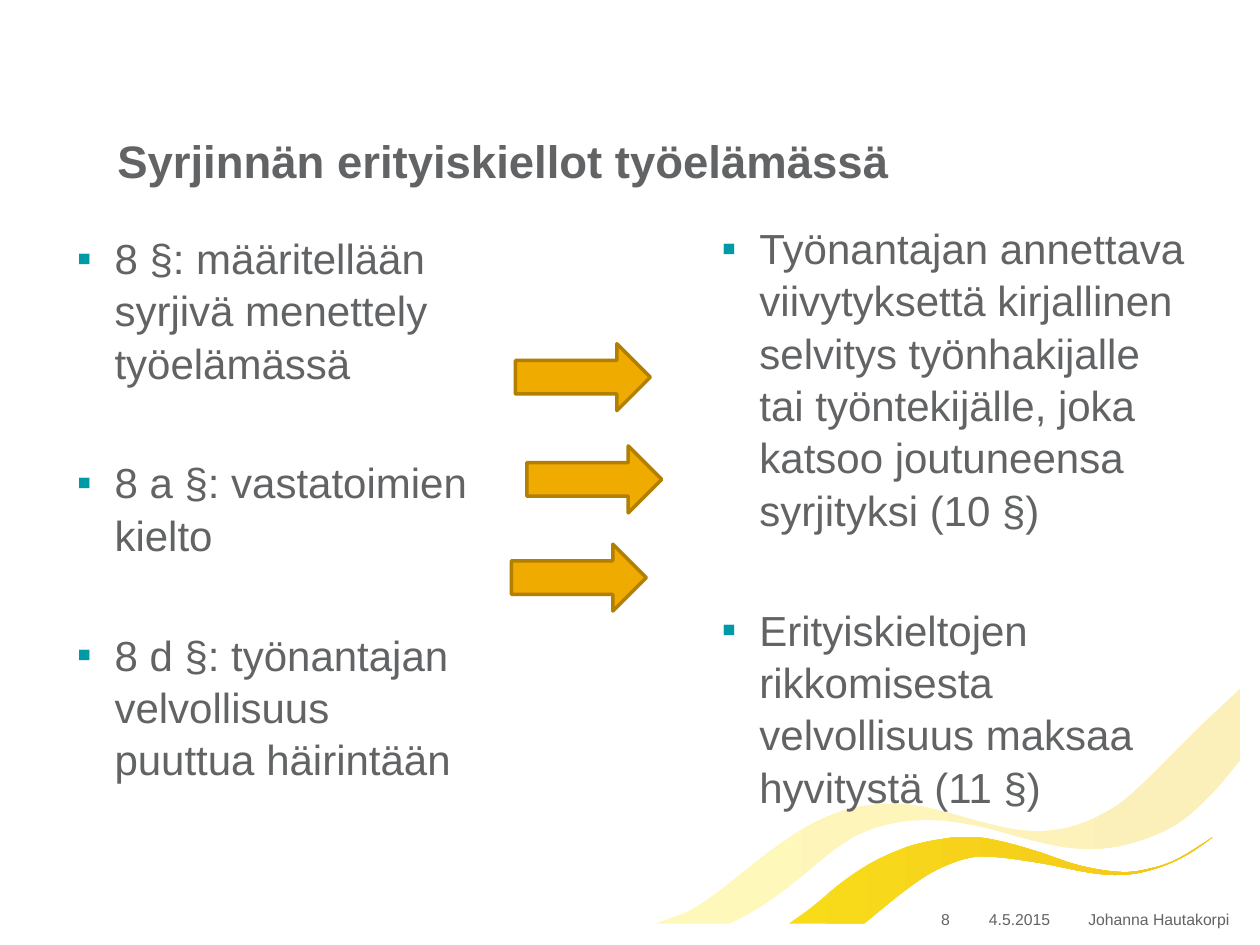
import lxml.etree
import pptx
import pptx.dml.color
import pptx.enum.shapes
import pptx.enum.text
import pptx.oxml.ns
import pptx.util

Cm = pptx.util.Cm
Pt = pptx.util.Pt
Align = pptx.enum.text.PP_ALIGN
Anchor = pptx.enum.text.MSO_ANCHOR

FONT = "Arial"
GREY = "616365"
TEAL = "009AA6"
BODY_SIZE = 24

PALE_RIBBON = [
    (13.21, 18.62), (13.89, 18.36), (14.5, 17.96), (15.37, 17.27), (16.18, 16.71),
    (16.94, 16.36), (17.55, 16.23), (18.19, 16.21), (18.82, 16.31), (19.86, 16.59),
    (20.6, 16.74), (21.21, 16.74), (21.84, 16.59), (22.53, 16.23), (23.14, 15.7),
    (24.08, 14.76), (25, 13.89),
], [
    (25, 15.32), (24.49, 15.93), (23.83, 16.54), (23.14, 16.89), (22.35, 17.09),
    (21.56, 17.09), (20.73, 16.92), (19.76, 16.66), (18.95, 16.54), (18.21, 16.56),
    (17.5, 16.74), (16.87, 17.09), (15.9, 17.88), (15.24, 18.34), (14.71, 18.62),
]
BRIGHT_RIBBON = [
    (15.9, 18.62), (16.36, 18.29), (17.02, 17.75), (17.65, 17.35), (18.39, 17.04),
    (19.15, 16.89), (19.63, 16.87), (20.22, 16.97), (20.93, 17.17), (21.77, 17.45),
    (22.61, 17.58), (23.22, 17.5), (23.77, 17.3), (24.46, 16.87),
], [
    (24.46, 16.87), (23.95, 17.22), (23.39, 17.48), (22.73, 17.63), (22.02, 17.6),
    (20.98, 17.4), (19.99, 17.27), (19.43, 17.32), (18.8, 17.58), (18.21, 17.98),
    (17.42, 18.62),
]

LEFT_ITEMS = [
    "8 §: määritellään syrjivä menettely työelämässä",
    "8 a §: vastatoimien kielto",
    "8 d §: työnantajan velvollisuus puuttua häirintään",
]
RIGHT_ITEMS = [
    "Työnantajan annettava viivytyksettä kirjallinen selvitys työnhakijalle tai "
    "työntekijälle, joka katsoo joutuneensa syrjityksi (10 §)",
    "Erityiskieltojen rikkomisesta velvollisuus maksaa hyvitystä (11 §)",
]


def color(value):
    """Return the RGB colour for a hex string."""
    return pptx.dml.color.RGBColor.from_string(value)


def place(shape, left, top, width, height):
    """Set the position and size of a shape in centimetres."""
    shape.left, shape.top = Cm(left), Cm(top)
    shape.width, shape.height = Cm(width), Cm(height)


def format_runs(paragraph, size, bold=False):
    """Apply the slide's type style to the runs of a paragraph."""
    for run in paragraph.runs:
        run.font.name = FONT
        run.font.size = Pt(size)
        run.font.bold = bold
        run.font.color.rgb = color(GREY)


def smooth_curve(points, steps=5):
    """Return points on a Catmull-Rom curve through the given points."""
    padded = [points[0], *points, points[-1]]
    curve = []
    for a, b, c, d in zip(padded, padded[1:], padded[2:], padded[3:]):
        for step in range(steps):
            t = step / steps
            curve.append(tuple(
                q + t * (r - p + t * (2 * p - 5 * q + 4 * r - s
                                      + t * (3 * q - p - 3 * r + s))) / 2
                for p, q, r, s in zip(a, b, c, d)
            ))
    return curve + [points[-1]]


def add_ribbon(slide, edges, start_color, end_color):
    """Add a wavy band bounded by an upper and a lower edge."""
    outline = [(Cm(x), Cm(y)) for edge in edges for x, y in smooth_curve(edge)]
    builder = slide.shapes.build_freeform(*outline[0], scale=1.0)
    builder.add_line_segments(outline[1:], close=True)
    shape = builder.convert_to_shape()
    shape.shadow.inherit = False
    shape.line.fill.background()
    shape.fill.gradient()
    shape.fill.gradient_angle = 0
    for stop, value in zip(shape.fill.gradient_stops, (start_color, end_color)):
        stop.color.rgb = color(value)


def add_title(slide, text):
    """Fill, move and format the title placeholder."""
    title = slide.shapes.title
    place(title, 2.11, 0.76, 21.21, 3.15)
    title.text_frame.text = text
    title.text_frame.vertical_anchor = Anchor.BOTTOM
    title.text_frame.paragraphs[0].alignment = Align.LEFT
    format_runs(title.text_frame.paragraphs[0], 26, bold=True)


def add_bullet(paragraph):
    """Give a paragraph a teal square bullet with a hanging indent."""
    properties = paragraph._p.get_or_add_pPr()
    properties.set("marL", str(Cm(0.76)))
    properties.set("indent", str(Cm(-0.76)))
    qn = pptx.oxml.ns.qn
    bullet_color = lxml.etree.SubElement(properties, qn("a:buClr"))
    lxml.etree.SubElement(bullet_color, qn("a:srgbClr"), val=TEAL)
    lxml.etree.SubElement(properties, qn("a:buFont"), typeface=FONT)
    lxml.etree.SubElement(properties, qn("a:buChar"), char="▪")


def add_bullet_list(slide, items, left, top, width, height):
    """Add a text box with widely spaced bulleted items."""
    box = slide.shapes.add_textbox(Cm(left), Cm(top), Cm(width), Cm(height))
    frame = box.text_frame
    frame.word_wrap = True
    for index, item in enumerate(items):
        paragraph = frame.add_paragraph() if index else frame.paragraphs[0]
        paragraph.text = item
        add_bullet(paragraph)
        paragraph.line_spacing = 1.04
        if index:
            paragraph.space_before = Pt(38.5)
        format_runs(paragraph, BODY_SIZE)


def add_footer(slide, text, left, width, alignment):
    """Add one small text in the footer row."""
    box = slide.shapes.add_textbox(Cm(left), Cm(18.24), Cm(width), Cm(0.61))
    frame = box.text_frame
    frame.word_wrap = True
    frame.vertical_anchor = Anchor.BOTTOM
    frame.text = text
    frame.paragraphs[0].alignment = alignment
    format_runs(frame.paragraphs[0], 9)


def add_arrow(slide, left, top):
    """Add an orange block arrow pointing right."""
    arrow = slide.shapes.add_shape(
        pptx.enum.shapes.MSO_SHAPE.RIGHT_ARROW, Cm(left), Cm(top), Cm(2.72), Cm(1.35)
    )
    arrow.shadow.inherit = False
    arrow.fill.solid()
    arrow.fill.fore_color.rgb = color("F0AB00")
    arrow.line.color.rgb = color("B27F00")
    arrow.line.width = Pt(2)


def main():
    """Build the slide and save the presentation."""
    presentation = pptx.Presentation()
    presentation.slide_width, presentation.slide_height = Cm(25.4), Cm(19.05)
    slide = presentation.slides.add_slide(presentation.slide_layouts[5])

    add_ribbon(slide, BRIGHT_RIBBON, "F8DC1A", "F4C61A")
    add_ribbon(slide, PALE_RIBBON, "FEF8BA", "FCF0BA")
    add_title(slide, "Syrjinnän erityiskiellot työelämässä")
    add_bullet_list(slide, LEFT_ITEMS, 1.3, 4.52, 8.61, 12.01)
    add_bullet_list(slide, RIGHT_ITEMS, 14.3, 4.32, 10.01, 12.19)
    add_footer(slide, "Johanna Hautakorpi", 21.69, 3.43, Align.LEFT)
    add_footer(slide, "8", 18.08, 1.32, Align.RIGHT)
    add_footer(slide, "4.5.2015", 19.41, 2.29, Align.CENTER)
    for left, top in ((10.39, 6.93), (10.62, 8.99), (10.31, 10.97)):
        add_arrow(slide, left, top)

    presentation.save("out.pptx")


if __name__ == "__main__":
    main()
